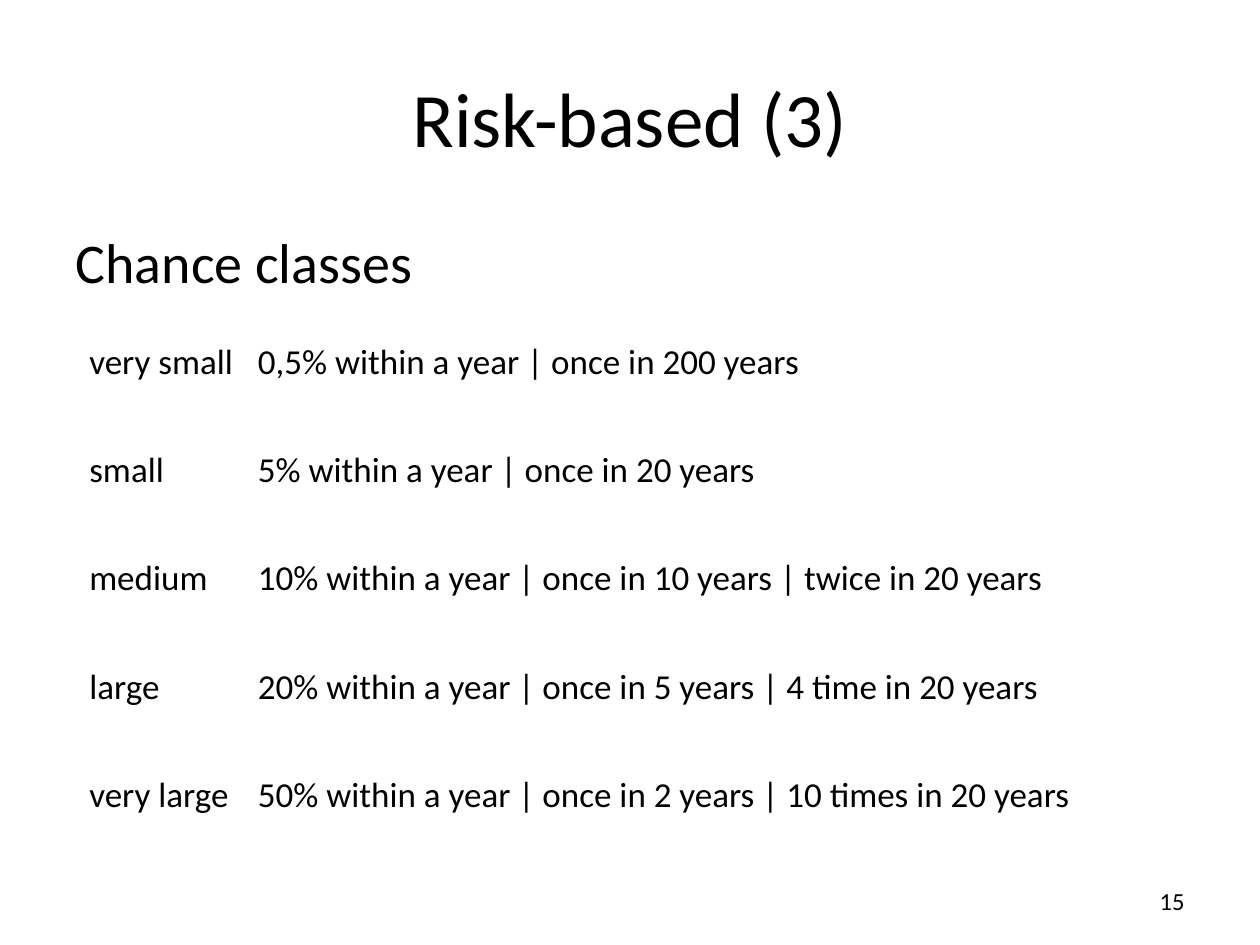
from pptx import Presentation
from pptx.dml.color import RGBColor
from pptx.enum.text import MSO_ANCHOR, MSO_AUTO_SIZE, PP_ALIGN
from pptx.oxml.xmlchemy import OxmlElement
from pptx.util import Cm, Pt

BLACK = RGBColor(0x00, 0x00, 0x00)
WHITE = RGBColor(0xFF, 0xFF, 0xFF)
FONT = "Calibri"
CHANCE_CLASSES = [
    ("very small", "0,5% within a year | once in 200 years"),
    ("small", "5% within a year | once in 20 years"),
    ("medium", "10% within a year | once in 10 years | twice in 20 years"),
    ("large", "20% within a year | once in 5 years | 4 time in 20 years"),
    ("very large", "50% within a year | once in 2 years | 10 times in 20 years"),
]


class SlideBuilder:
    """Hold the text style and the current slide, and add its elements."""

    def __init__(self, slide, font, color):
        self.slide = slide
        self.font = font
        self.color = color
        slide.background.fill.solid()
        slide.background.fill.fore_color.rgb = WHITE

    def set_text(self, frame, text, size, align=PP_ALIGN.LEFT):
        frame.text = text
        frame.word_wrap = True
        paragraph = frame.paragraphs[0]
        paragraph.alignment = align
        paragraph.font.name = self.font
        paragraph.font.size = Pt(size)
        paragraph.font.bold = False
        paragraph.font.color.rgb = self.color
        return paragraph

    def place(self, holder, left, top, width, height):
        holder.left, holder.top = Cm(left), Cm(top)
        holder.width, holder.height = Cm(width), Cm(height)
        holder.text_frame.auto_size = MSO_AUTO_SIZE.NONE

    def title(self, text, box):
        heading = self.slide.shapes.title
        self.place(heading, *box)
        heading.text_frame.vertical_anchor = MSO_ANCHOR.MIDDLE
        self.set_text(heading.text_frame, text, 44, PP_ALIGN.CENTER)

    def body(self, text, box):
        subtitle = self.slide.placeholders[1]
        self.place(subtitle, *box)
        properties = self.set_text(subtitle.text_frame, text, 32)._p.get_or_add_pPr()
        properties.set("marL", "0")
        properties.set("indent", "0")
        properties.insert_element_before(
            OxmlElement("a:buNone"), "a:tabLst", "a:defRPr", "a:extLst"
        )

    def table(self, rows, left, top, column_widths, row_height):
        grid = self.slide.shapes.add_table(
            len(rows), len(column_widths), Cm(left), Cm(top),
            Cm(sum(column_widths)), Cm(row_height * len(rows)),
        ).table
        grid.first_row = grid.horz_banding = False
        for column, width in zip(grid.columns, column_widths):
            column.width = Cm(width)
        for row, texts in zip(grid.rows, rows):
            row.height = Cm(row_height)
            for cell, text in zip(row.cells, texts):
                cell.fill.background()
                cell.margin_left = cell.margin_right = Cm(0.1)
                cell.margin_top = cell.margin_bottom = Cm(0.05)
                self.set_text(cell.text_frame, text, 20)

    def page_number(self, number, box):
        footer = self.slide.shapes.add_textbox(*map(Cm, box))
        footer.text_frame.vertical_anchor = MSO_ANCHOR.MIDDLE
        self.set_text(footer.text_frame, str(number), 14, PP_ALIGN.RIGHT)


def main():
    deck = Presentation()
    deck.slide_width, deck.slide_height = Cm(25.4), Cm(19.05)
    slide = deck.slides.add_slide(deck.slide_layouts[1])
    builder = SlideBuilder(slide, FONT, BLACK)
    builder.title("Risk-based (3)", (1.27, 0.76, 22.86, 3.18))
    builder.body("Chance classes", (1.27, 4.45, 22.83, 1.47))
    builder.page_number(15, (18.2, 17.65, 5.93, 1.01))
    builder.table(CHANCE_CLASSES, 1.7, 6.83, (3.4, 19.02), 2.18)
    deck.save("out.pptx")


if __name__ == "__main__":
    main()
